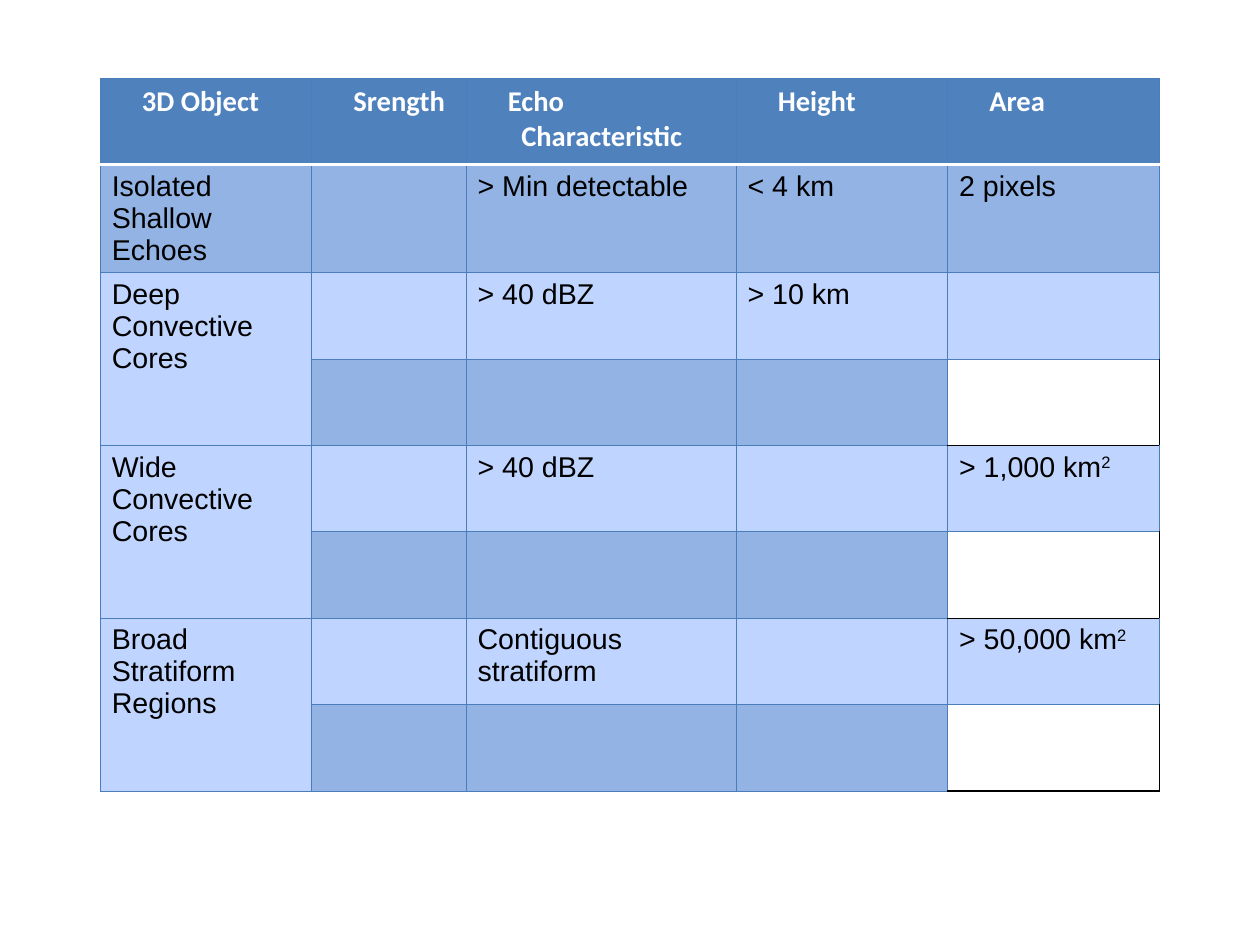
import pptx
import pptx.util
import pptx.dml.color
import pptx.oxml
import pptx.oxml.ns
from lxml import etree

Cm, Pt = pptx.util.Cm, pptx.util.Pt
RGB = pptx.dml.color.RGBColor

HEAD = RGB(0x4F, 0x81, 0xBD)
DARK = RGB(0x92, 0xB3, 0xE4)
LIGHT = RGB(0xBF, 0xD4, 0xFE)
EDGE = RGB(0x4A, 0x7E, 0xBB)
WHITE = RGB(0xFF, 0xFF, 0xFF)
BLACK = RGB(0, 0, 0)

THIN = (EDGE, 0.75)
THICK = (WHITE, 2)
INK = (BLACK, 1)

COLS = [4.7, 3.43, 6, 4.7, 4.7]
ROWS = [1.92, 2.4] + [1.92] * 6

# A caret marks the start of a superscript.
TEXT = [
    ["3D Object", "Srength", "Echo Characteristic", "Height", "Area"],
    ["Isolated Shallow Echoes", "", "> Min detectable", "< 4 km", "2 pixels"],
    ["Deep Convective Cores", "", "> 40 dBZ", "> 10 km", ""],
    [""] * 5,
    ["Wide Convective Cores", "", "> 40 dBZ", "", "> 1,000 km^2"],
    [""] * 5,
    ["Broad Stratiform Regions", "", "Contiguous\vstratiform", "",
     "> 50,000 km^2"],
    [""] * 5,
]


def look(row, col):
    """Return the fill of a cell and its left, right, top and bottom lines."""
    head, last = row == 0, col == len(COLS) - 1
    blank = last and row > 2 and row % 2 == 1
    below = last and row > 3 and row % 2 == 0
    if head:
        fill = HEAD
    elif blank:
        fill = WHITE
    elif row % 2 and col:
        fill = DARK
    else:
        fill = DARK if row == 1 else LIGHT
    right = INK if blank else THIN
    top = THICK if row == 1 else INK if below else THIN
    base = THICK if head else INK if blank else THIN
    return fill, (THIN, right, top, base)


def edge(cell, lines):
    props = cell._tc.get_or_add_tcPr()
    qn = pptx.oxml.ns.qn
    for side, (color, width) in zip("LRTB", lines):
        line = etree.SubElement(props, qn("a:ln" + side), w=str(Pt(width)))
        solid = etree.SubElement(line, qn("a:solidFill"))
        etree.SubElement(solid, qn("a:srgbClr"), val=str(color))


def write(cell, text, head):
    para = cell.text_frame.paragraphs[0]
    main, _, power = text.partition("^")
    para.text = main
    if power:
        run = para.add_run()
        run.text = power
        run._r.get_or_add_rPr().set("baseline", "30000")
    if head:
        props = para._p.get_or_add_pPr()
        props.set("marL", str(Cm(0.97)))
        props.set("indent", str(Cm(-0.3)))
    font = para.font
    font.name = "Calibri" if head else "Arial"
    font.size = Pt(18)
    font.bold = head
    font.color.rgb = WHITE if head else BLACK


def grid(slide, left, top):
    """Place the table of echo types with its corner at left, top."""
    frame = slide.shapes.add_table(len(ROWS), len(COLS), Cm(left), Cm(top),
                                   Cm(sum(COLS)), Cm(sum(ROWS)))
    table = frame.table
    table.first_row = table.horz_banding = False
    for col, width in zip(table.columns, COLS):
        col.width = Cm(width)
    for row, height in zip(table.rows, ROWS):
        row.height = Cm(height)
    for y, words in enumerate(TEXT):
        for x, text in enumerate(words):
            cell = table.cell(y, x)
            fill, lines = look(y, x)
            edge(cell, lines)
            cell.fill.solid()
            cell.fill.fore_color.rgb = fill
            write(cell, text, y == 0)
    for y in range(2, len(ROWS), 2):
        table.cell(y, 0).merge(table.cell(y + 1, 0))


def main():
    deck = pptx.Presentation()
    deck.slide_width, deck.slide_height = Cm(28), Cm(21)
    slide = deck.slides.add_slide(deck.slide_layouts[6])
    grid(slide, 2.23, 1.74)
    deck.save("out.pptx")


if __name__ == "__main__":
    main()
